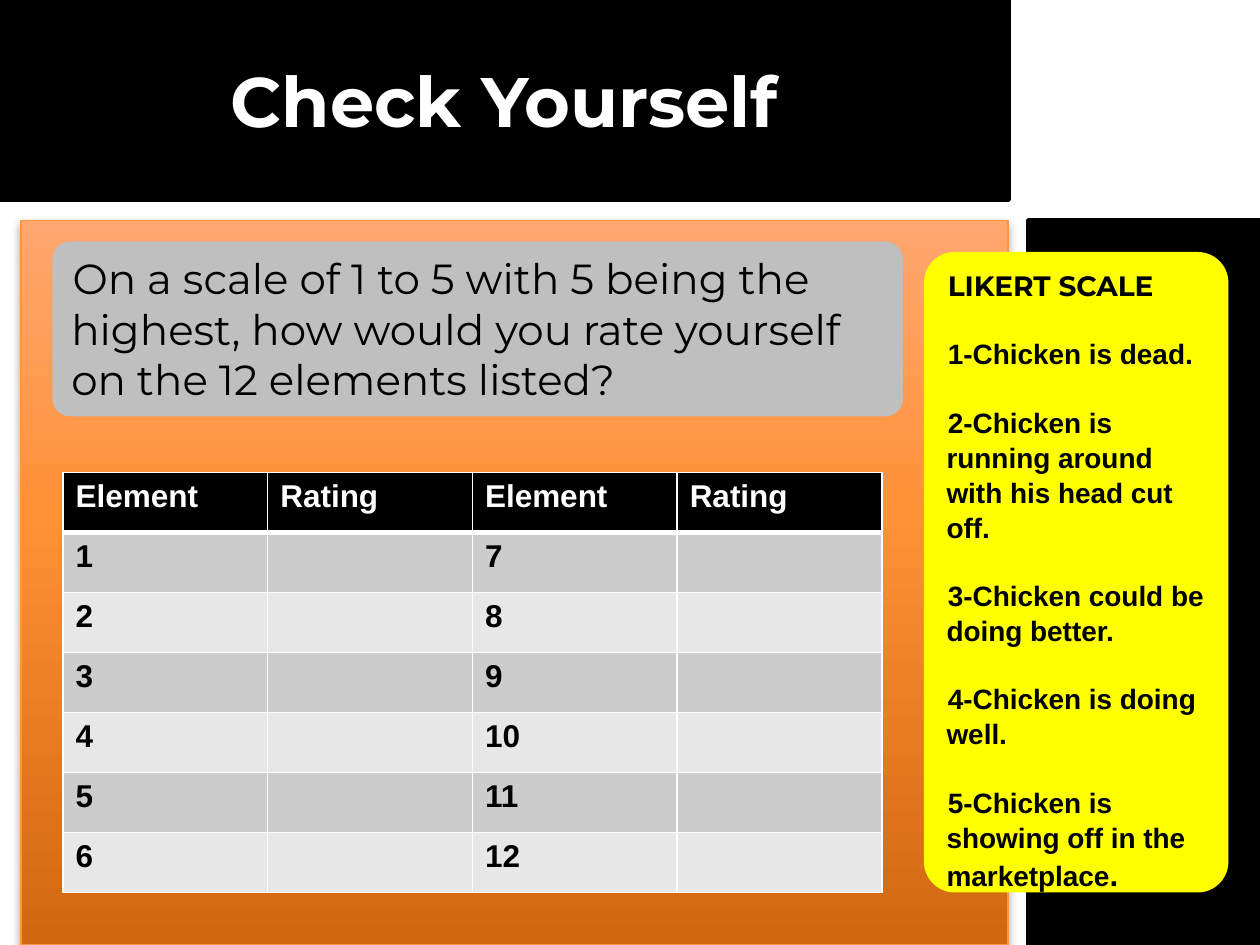
import copy
from dataclasses import dataclass
from typing import Any

import pptx
import pptx.dml.color
import pptx.enum.shapes
import pptx.enum.text
import pptx.oxml
import pptx.oxml.ns
import pptx.shapes.autoshape
import pptx.table
import pptx.text.text
import pptx.util
from lxml import etree

Pt = pptx.util.Pt
RGB = pptx.dml.color.RGBColor
SHAPE = pptx.enum.shapes.MSO_SHAPE
ANCHOR = pptx.enum.text.MSO_ANCHOR
ALIGN = pptx.enum.text.PP_ALIGN
qn = pptx.oxml.ns.qn

BLACK = RGB(0x00, 0x00, 0x00)
WHITE = RGB(0xFF, 0xFF, 0xFF)
GREY = RGB(0xBF, 0xBF, 0xBF)
YELLOW = RGB(0xFF, 0xFF, 0x00)
ORANGE_LINE = RGB(0xFF, 0x95, 0x3E)
ORANGE_STOPS = (
    (0, RGB(0xD1, 0x67, 0x0F)),
    (0.6, RGB(0xFF, 0x91, 0x37)),
    (1, RGB(0xFF, 0xA7, 0x70)),
)
BANDS = (RGB(0xCC, 0xCC, 0xCC), RGB(0xE7, 0xE7, 0xE7))

TITLE_FONT = {"name": "Montserrat", "size": Pt(40), "bold": True}
QUESTION_FONT = {"name": "Montserrat", "size": Pt(24), "bold": False}
SCALE_HEADING_FONT = {"name": "Montserrat", "size": Pt(16), "bold": True}
SCALE_FONT = {"name": "Arial", "size": Pt(16), "bold": True}
TABLE_FONT = {"name": "Arial", "size": Pt(18), "bold": True}

QUESTION = (
    "On a scale of 1 to 5 with 5 being the highest, how would you rate "
    "yourself on the 12 elements listed?"
)
RATINGS = (
    "1-Chicken is dead.",
    "2-Chicken is running around with his head cut off.",
    "3-Chicken could be doing better.",
    "4-Chicken is doing well.",
    "5-Chicken is showing off in the marketplace",
)
ELEMENTS_PER_COLUMN = 6


@dataclass(frozen=True)
class Panel:
    left: float
    top: float
    width: float
    height: float
    fill: RGB
    line: RGB | None = None
    line_width: float = 0
    rounding: float | None = None


BACKDROP = Panel(12, 126, 564, 414, ORANGE_LINE, ORANGE_LINE, 0.75)
BANNER = Panel(0, 0, 576, 114, BLACK, BLACK, 3.35)
SIDEBAR = Panel(588, 126, 132, 414, BLACK, BLACK, 3.35)
QUESTION_CARD = Panel(30, 138, 486, 100, GREY, rounding=0.101)
SCALE_CARD = Panel(528, 144, 174, 366, YELLOW, rounding=0.101)


def set_values(target: Any, values: dict[str, Any]) -> None:
    for key, value in values.items():
        setattr(target, key, value)


def style_font(font: pptx.text.text.Font, values: dict[str, Any], color: RGB = BLACK) -> None:
    set_values(font, values)
    font.color.rgb = color


def draw_panel(slide: Any, panel: Panel) -> pptx.shapes.autoshape.Shape:
    kind = SHAPE.RECTANGLE if panel.rounding is None else SHAPE.ROUNDED_RECTANGLE
    shape = slide.shapes.add_shape(
        kind, Pt(panel.left), Pt(panel.top), Pt(panel.width), Pt(panel.height)
    )
    shape.shadow.inherit = False
    shape.fill.solid()
    shape.fill.fore_color.rgb = panel.fill
    if panel.line is None:
        shape.line.fill.background()
    else:
        shape.line.color.rgb = panel.line
        shape.line.width = Pt(panel.line_width)
    if panel.rounding is not None:
        shape.adjustments[0] = panel.rounding
    return shape


def shade_backdrop(backdrop: pptx.shapes.autoshape.Shape) -> None:
    backdrop.fill.gradient()
    backdrop.fill.gradient_angle = 90
    stop_list = backdrop._element.spPr.find(".//" + qn("a:gsLst"))
    stop_list.append(copy.deepcopy(stop_list[-1]))
    for stop, (position, color) in zip(backdrop.fill.gradient_stops, ORANGE_STOPS):
        stop.position = position
        stop.color.rgb = color
    effects = backdrop._element.spPr.find(qn("a:effectLst"))
    shadow = etree.SubElement(
        effects, qn("a:outerShdw"), blurRad=str(Pt(5.2)), dist=str(Pt(3)),
        dir="5400000", rotWithShape="0",
    )
    tint = etree.SubElement(shadow, qn("a:srgbClr"), val="000000")
    etree.SubElement(tint, qn("a:alpha"), val="40000")


def write_card(card: pptx.shapes.autoshape.Shape, lines: list[tuple[str, dict[str, Any]]],
               gap: float = 0, spacing: float = 1.0) -> None:
    frame = card.text_frame
    set_values(frame, {"word_wrap": True, "vertical_anchor": ANCHOR.TOP})
    for index, (text, font) in enumerate(lines):
        paragraph = frame.add_paragraph() if index else frame.paragraphs[0]
        set_values(paragraph, {"alignment": ALIGN.LEFT, "line_spacing": spacing})
        if index:
            paragraph.space_before = Pt(gap)
        properties = paragraph._p.get_or_add_pPr()
        for key in ("marL", "indent"):
            properties.set(key, str(Pt(0.72)))
        run = paragraph.add_run()
        run.text = text
        style_font(run.font, font)


def fill_cell(cell: pptx.table._Cell, text: str, fill: RGB, color: RGB, bottom: float) -> None:
    cell.fill.solid()
    cell.fill.fore_color.rgb = fill
    paragraph = cell.text_frame.paragraphs[0]
    paragraph.text = text
    style_font(paragraph.font, TABLE_FONT, color)
    edges = {"a:lnL": 1, "a:lnR": 1, "a:lnT": 1, "a:lnB": bottom}
    for index, (edge, width) in enumerate(edges.items()):
        border = etree.Element(qn(edge), w=str(Pt(width)))
        solid = etree.SubElement(border, qn("a:solidFill"))
        etree.SubElement(solid, qn("a:srgbClr"), val=str(WHITE))
        cell._tc.get_or_add_tcPr().insert(index, border)


def draw_ratings_table(slide: Any) -> None:
    rows = [("Element", "Rating") * 2] + [
        (str(number), "", str(number + ELEMENTS_PER_COLUMN), "")
        for number in range(1, ELEMENTS_PER_COLUMN + 1)
    ]
    ratings = slide.shapes.add_table(
        len(rows), len(rows[0]), Pt(36), Pt(270), Pt(468), Pt(240.1)
    ).table
    for row_index, row in enumerate(rows):
        header = row_index == 0
        fill = BLACK if header else BANDS[(row_index - 1) % 2]
        color = WHITE if header else BLACK
        for column_index, text in enumerate(row):
            fill_cell(ratings.cell(row_index, column_index), text, fill, color, 3 if header else 1)


def place_title(slide: Any) -> None:
    title = slide.shapes.title
    set_values(title, {"left": Pt(0), "top": Pt(12), "width": Pt(576), "height": Pt(90)})
    title.text_frame.vertical_anchor = ANCHOR.MIDDLE
    paragraph = title.text_frame.paragraphs[0]
    paragraph.text = "Check Yourself"
    paragraph.alignment = ALIGN.CENTER
    style_font(paragraph.font, TITLE_FONT, WHITE)
    slide.shapes._spTree.append(title._element)


def main() -> None:
    deck = pptx.Presentation()
    set_values(deck, {"slide_width": Pt(720), "slide_height": Pt(540)})
    slide = deck.slides.add_slide(deck.slide_layouts[5])
    shade_backdrop(draw_panel(slide, BACKDROP))
    for panel in (BANNER, SIDEBAR):
        draw_panel(slide, panel)
    place_title(slide)
    write_card(draw_panel(slide, QUESTION_CARD), [(QUESTION, QUESTION_FONT)])
    draw_ratings_table(slide)
    scale = draw_panel(slide, SCALE_CARD)
    scale_lines = [("LIKERT SCALE", SCALE_HEADING_FONT)]
    scale_lines += [(rating, SCALE_FONT) for rating in RATINGS]
    write_card(scale, scale_lines, gap=19.15, spacing=1.04)
    period = scale.text_frame.paragraphs[-1].add_run()
    period.text = "."
    style_font(period.font, {**SCALE_FONT, "size": Pt(18)})
    deck.save("out.pptx")


if __name__ == "__main__":
    main()
